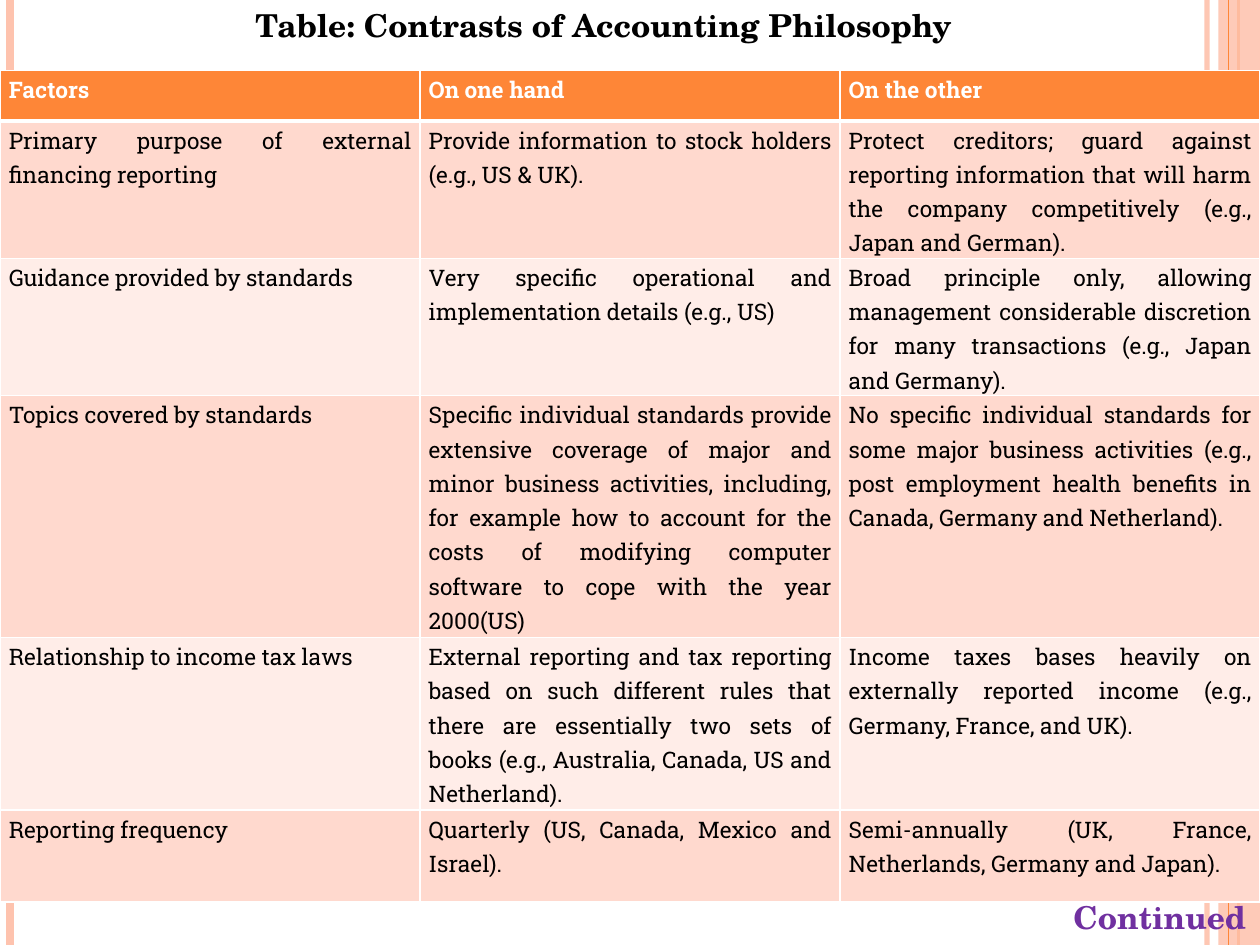
from lxml import etree
from pptx import Presentation
from pptx.dml.color import RGBColor
from pptx.enum import shapes, text
from pptx.oxml import ns
from pptx.util import Inches, Pt

COLORS = {
    "orange": "FE8637", "peach": "FEC3AE", "white": "FFFFFF", "black": "000000",
    "band_dark": "FFD9CE", "band_light": "FFEDE8", "purple": "7030A0",
}
HEADING_FONT, BODY_FONT = "TeX Gyre Schola", "Roboto Slab"


def rgb(name):
    return RGBColor.from_string(COLORS[name])


def style_font(font, family, size, color, bold):
    font.name, font.size, font.bold = family, Pt(size), bold
    font.color.rgb = rgb(color)


prs = Presentation()
prs.slide_width, prs.slide_height = Inches(10), Inches(7.5)
slide = prs.slides.add_slide(prs.slide_layouts[6])

# Vertical stripes along both edges, back to front; the band is a wide one
stripes = [
    (9.58, "peach", 3, 93),
    (0.08, "peach", 4.5, 100),
    (9.83, "orange", 1.5, 100),
    ("band", "peach", None, 87),
    (9.75, "orange", 0.75, 100),
]
for x, color, weight, opacity in stripes:
    if x == "band":
        stripe = slide.shapes.add_shape(
            shapes.MSO_SHAPE.RECTANGLE, Inches(9.67), 0, Inches(0.33), prs.slide_height)
        stripe.shadow.inherit = False
        stripe.line.fill.background()
        paint = stripe.fill
        paint.solid()
        paint.fore_color.rgb = rgb(color)
    else:
        stripe = slide.shapes.add_connector(
            shapes.MSO_CONNECTOR.STRAIGHT, Inches(x), 0, Inches(x), prs.slide_height)
        stripe.line.width = Pt(weight)
        stripe.line.color.rgb = rgb(color)
        etree.SubElement(stripe._element.spPr, ns.qn("a:effectLst"))
    if opacity < 100:
        tone = stripe._element.spPr.find(".//" + ns.qn("a:srgbClr"))
        etree.SubElement(tone, ns.qn("a:alpha"), val=str(opacity * 1000))

# Title
title = slide.shapes.add_textbox(0, 0, Inches(9.58), Inches(1.01)).text_frame
title.word_wrap = True
title.text = "Table: Contrasts of Accounting Philosophy"
title.paragraphs[0].alignment = text.PP_ALIGN.CENTER
style_font(title.paragraphs[0].font, HEADING_FONT, 18, "black", True)

# Table of contrasts: row height, then the three cells
contrasts = [
    (0.4, "Factors", "On one hand", "On the other"),
    (1.09, "Primary purpose of external financing reporting",
     "Provide information to stock holders (e.g., US & UK).",
     "Protect creditors; guard against reporting information that will harm "
     "the company competitively (e.g., Japan and German)."),
    (1.09, "Guidance provided by standards",
     "Very specific operational and implementation details (e.g., US)",
     "Broad principle only, allowing management considerable discretion for "
     "many transactions (e.g., Japan and Germany)."),
    (1.92, "Topics covered by standards",
     "Specific individual standards provide extensive coverage of major and "
     "minor business activities, including, for example how to account for the "
     "costs of modifying computer software to cope with the year 2000(US)",
     "No specific individual standards for some major business activities "
     "(e.g., post employment health benefits in Canada, Germany and Netherland)."),
    (1.37, "Relationship to income tax laws",
     "External reporting and tax reporting based on such different rules that "
     "there are essentially two sets of books (e.g., Australia, Canada, US and "
     "Netherland).",
     "Income taxes bases heavily on externally reported income (e.g., Germany, "
     "France, and UK)."),
    (0.73, "Reporting frequency",
     "Quarterly (US, Canada, Mexico and Israel).",
     "Semi-annually (UK, France, Netherlands, Germany and Japan)."),
]
table = slide.shapes.add_table(
    len(contrasts), 3, 0, Inches(0.56), Inches(10), Inches(6.6)).table
for r, (height, *wordings) in enumerate(contrasts):
    table.rows[r].height = Inches(height)
    for c, wording in enumerate(wordings):
        cell = table.cell(r, c)
        cell.margin_left = cell.margin_right = Inches(0.07)
        cell.margin_top = cell.margin_bottom = 0
        cell.text = wording
        para = cell.text_frame.paragraphs[0]
        para.alignment = text.PP_ALIGN.JUSTIFY
        para.line_spacing = 1.15
        style_font(para.font, BODY_FONT, 13, "black" if r else "white", r == 0)

        # White rules, thicker under the header
        for side in "LRTB":
            thick = (r, side) in ((0, "B"), (1, "T"))
            rule = etree.SubElement(cell._tc.get_or_add_tcPr(), ns.qn("a:ln" + side),
                                    w=str(Pt(3 if thick else 1)))
            ink = etree.SubElement(rule, ns.qn("a:solidFill"))
            etree.SubElement(ink, ns.qn("a:srgbClr"), val=COLORS["white"])
        cell.fill.solid()
        band = "band_dark" if r % 2 else "band_light"
        cell.fill.fore_color.rgb = rgb(band if r else "orange")

# Continuation mark
continued = slide.shapes.add_textbox(
    Inches(8.42), Inches(7.08), Inches(2.42), Inches(0.4)).text_frame
continued.word_wrap = True
continued.text = "Continued"
style_font(continued.paragraphs[0].font, HEADING_FONT, 18, "purple", True)

prs.save("out.pptx")
